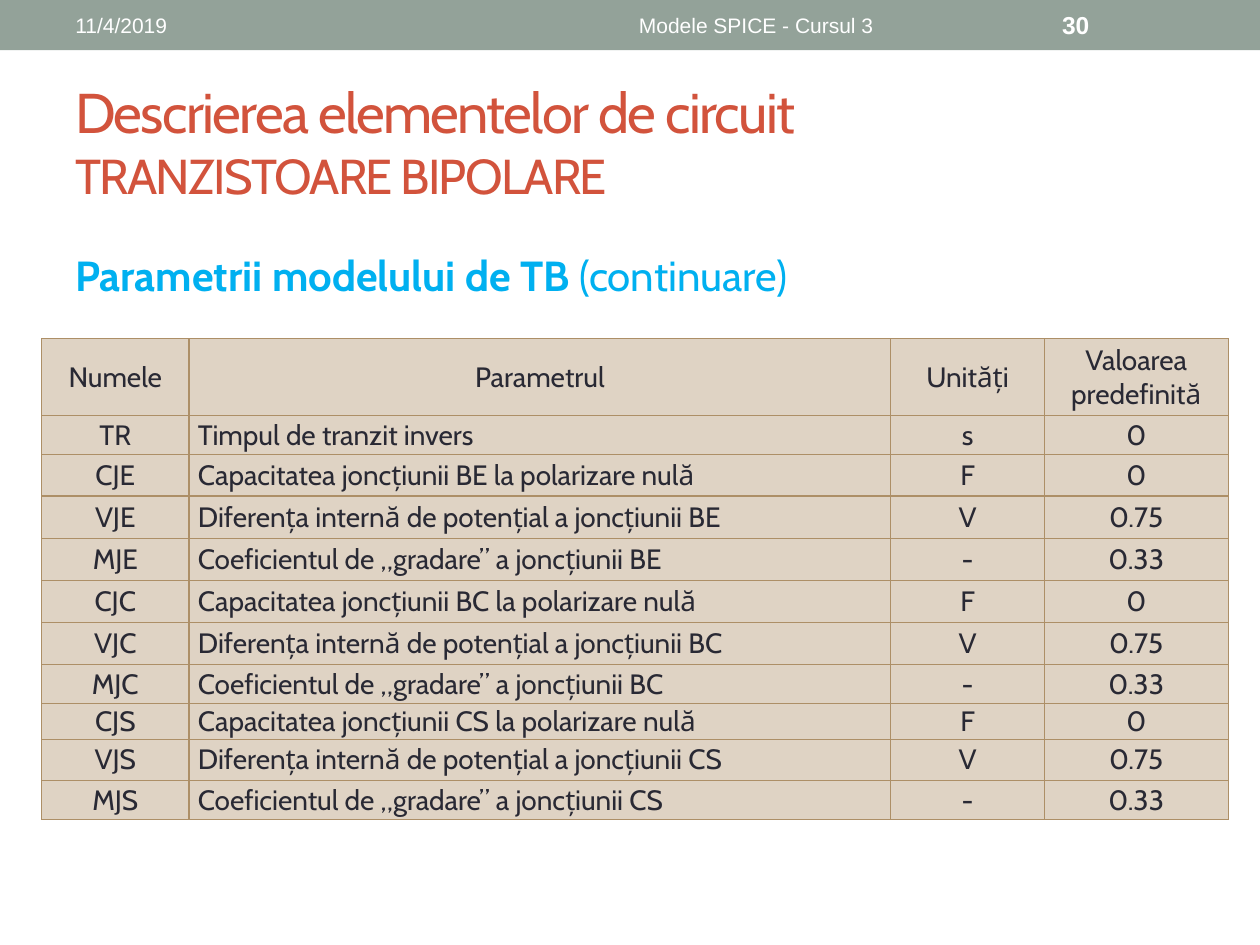
from lxml import etree
from pptx import Presentation
from pptx.dml.color import RGBColor
from pptx.enum.shapes import MSO_SHAPE
from pptx.enum.text import MSO_ANCHOR as ANCHOR, PP_ALIGN as ALIGN
from pptx.oxml.ns import qn
from pptx.util import Cm, Pt

BAR, RED, BLUE, WHITE = "93A299", "D2533C", "00B0F0", "FFFFFF"
INK, CELL, RULE = "292934", "DFD3C4", "AD8F67"

HEADER = ("Numele", "Parametrul", "Unități", "Valoarea predefinită")
COL_WIDTHS = (2.97, 14.15, 3.09, 3.71)
ROW_HEIGHTS = (1.55, 0.79, 0.83, 0.85, 0.85, 0.85, 0.85, 0.79, 0.71, 0.84, 0.78)
# Each junction has the same three parameters
JUNCTION_PARAMS = (
    ("CJ", "Capacitatea joncțiunii {} la polarizare nulă", "F", "0"),
    ("VJ", "Diferența internă de potențial a joncțiunii {}", "V", "0.75"),
    ("MJ", "Coeficientul de „gradare” a joncțiunii {}", "-", "0.33"),
)
JUNCTIONS = (("E", "BE"), ("C", "BC"), ("S", "CS"))


def rgb(hex_color):
    return RGBColor.from_string(hex_color)


def add_run(p, text, size=16, color=INK, font="Cabin", bold=False, spacing=0):
    r = p.add_run()
    r.text = text
    r.font.size, r.font.name, r.font.bold = Pt(size), font, bold
    r.font.color.rgb = rgb(color)
    if spacing:
        r.font._element.set("spc", str(int(spacing * 100)))
    return r


def add_text_box(slide, box, anchor=ANCHOR.TOP, align=ALIGN.LEFT):
    tf = slide.shapes.add_textbox(*(Cm(v) for v in box)).text_frame
    tf.word_wrap = True
    tf.vertical_anchor = anchor
    p = tf.paragraphs[0]
    p.alignment = align
    return p


def add_top_bar(slide, box):
    x, y, w, h = box
    sp = slide.shapes.add_shape(MSO_SHAPE.RECTANGLE, *(Cm(v) for v in box))
    sp.shadow.inherit = False
    sp.fill.solid()
    sp.fill.fore_color.rgb = rgb(BAR)
    sp.line.fill.background()
    # Date, footer and slide number
    for left, width, text, align, size, bold in (
        (1.27, 8.05, "11/4/2019", ALIGN.LEFT, 12, False),
        (9.53, 11.43, "Modele SPICE - Cursul 3", ALIGN.CENTER, 12, False),
        (21.16, 2.97, "30", ALIGN.LEFT, 14, True),
    ):
        p = add_text_box(slide, (x + left, y + 0.05, width, h - 0.1), ANCHOR.MIDDLE, align)
        add_run(p, text, size=size, color=WHITE, font="Arial", bold=bold)


def add_heading(slide, box):
    x, y, w, h = box
    # Two-line title
    p = add_text_box(slide, (x, y, w, 2.74), ANCHOR.MIDDLE)
    add_run(p, "Descrierea elementelor de circuit", size=32, color=RED, spacing=-1)
    p.add_line_break()
    add_run(p, "TRANZISTOARE BIPOLARE", size=28, color=RED, spacing=-1)
    # Subtitle at the foot of the box
    p = add_text_box(slide, (x, y + h - 1.27, w, 1.27))
    add_run(p, "Parametrii modelului de TB ", size=24, color=BLUE, bold=True)
    add_run(p, "(continuare)", size=24, color=BLUE)


def set_borders(cell, color, width):
    tc_pr = cell._tc.get_or_add_tcPr()
    for i, side in enumerate(("lnL", "lnR", "lnT", "lnB")):
        ln = etree.Element(qn(f"a:{side}"), w=str(Pt(width)))
        fill = etree.SubElement(ln, qn("a:solidFill"))
        etree.SubElement(fill, qn("a:srgbClr"), val=color)
        tc_pr.insert(i, ln)


def parameter_rows():
    rows = [HEADER, ("TR", "Timpul de tranzit invers", "s", "0")]
    for suffix, junction in JUNCTIONS:
        for prefix, text, unit, default in JUNCTION_PARAMS:
            rows.append((prefix + suffix, text.format(junction), unit, default))
    return rows


def add_parameter_table(slide, x, y):
    rows = parameter_rows()
    table = slide.shapes.add_table(
        len(rows), len(HEADER), Cm(x), Cm(y),
        Cm(sum(COL_WIDTHS)), Cm(sum(ROW_HEIGHTS))).table
    for col, width in zip(table.columns, COL_WIDTHS):
        col.width = Cm(width)
    for i, (values, height) in enumerate(zip(rows, ROW_HEIGHTS)):
        table.rows[i].height = Cm(height)
        for j, value in enumerate(values):
            cell = table.cell(i, j)
            cell.margin_left = cell.margin_right = Cm(0.18)
            cell.margin_top = cell.margin_bottom = 0
            cell.vertical_anchor = ANCHOR.MIDDLE
            cell.fill.solid()
            cell.fill.fore_color.rgb = rgb(CELL)
            set_borders(cell, RULE, 0.75)
            p = cell.text_frame.paragraphs[0]
            p.alignment = ALIGN.LEFT if i and j == 1 else ALIGN.CENTER
            add_run(p, value)


def main():
    prs = Presentation()
    prs.slide_width, prs.slide_height = Cm(25.4), Cm(19.05)
    slide = prs.slides.add_slide(prs.slide_layouts[6])
    add_top_bar(slide, (0, 0, 25.4, 1.01))
    add_heading(slide, (1.27, 1.47, 22.86, 4.7))
    add_parameter_table(slide, 0.84, 6.83)
    prs.save("out.pptx")


if __name__ == "__main__":
    main()
